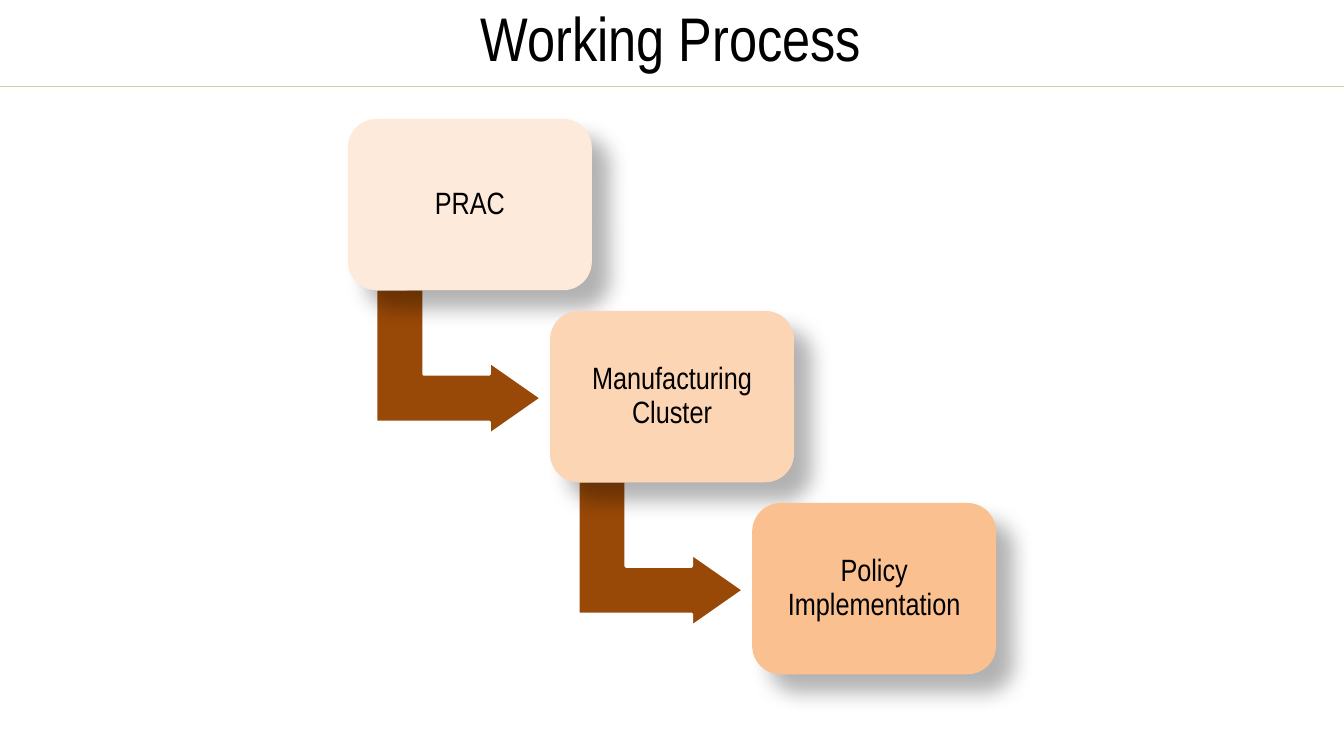
from lxml import etree
from pptx import Presentation
from pptx.dml.color import RGBColor
from pptx.enum.shapes import MSO_SHAPE as Shape
from pptx.enum.text import MSO_ANCHOR as Anchor, PP_ALIGN as Align
from pptx.oxml import parse_xml
from pptx.oxml.ns import nsdecls
from pptx.util import Inches, Pt

COLORS = {
    "text": "000000",
    "title_line": "C3D69B",
    "arrow": "984807",
    "arrow_line": "FFFFFF",
    "shadow": "000000",
    "prac": "FDEADA",
    "cluster": "FCD5B5",
    "policy": "FAC090",
}
FONT = "Arial Narrow"
STEPS = [
    ("PRAC", "prac"),
    ("Manufacturing Cluster", "cluster"),
    ("Policy Implementation", "policy"),
]
STEP_W, STEP_H = 2.42, 1.7
ARROW_W, ARROW_H = 1.44, 1.64


def color(name):
    return RGBColor.from_string(COLORS[name])


def style_text(frame, text, size):
    frame.text = text
    frame.word_wrap = True
    frame.vertical_anchor = Anchor.MIDDLE
    paragraph = frame.paragraphs[0]
    paragraph.alignment = Align.CENTER
    paragraph.font.name = FONT
    paragraph.font.size = Pt(size)
    paragraph.font.color.rgb = color("text")
    return paragraph


def add_shadow(shape):
    """Soft shadow falling to the lower right."""
    shape.shadow.inherit = False
    effects = shape.element.spPr.find("{*}effectLst")
    shadow = parse_xml(
        f'<a:outerShdw {nsdecls("a")} blurRad="{Pt(15)}" dist="{Pt(18)}" '
        'dir="2700000" algn="tl" rotWithShape="0"/>')
    tint = etree.SubElement(shadow, shadow.tag.replace("outerShdw", "srgbClr"),
                            val=COLORS["shadow"])
    etree.SubElement(tint, shadow.tag.replace("outerShdw", "alpha"), val="30000")
    effects.append(shadow)


def draw_title(slide, left, top, width, height):
    title = slide.shapes.title
    title.left, title.top = Inches(left), Inches(top)
    title.width, title.height = Inches(width), Inches(height)
    title.line.color.rgb = color("title_line")
    title.line.width = Pt(0.75)
    style_text(title.text_frame, "Working Process", 44)


def draw_arrow(slide, left, top):
    """Bent arrow, turned to lead down and then right."""
    arrow = slide.shapes.add_shape(Shape.BENT_UP_ARROW, Inches(left), Inches(top),
                                   Inches(ARROW_W), Inches(ARROW_H))
    arrow.rotation = 90
    for index, value in enumerate((0.328, 0.25, 0.358)):
        arrow.adjustments[index] = value
    arrow.shadow.inherit = False
    arrow.fill.solid()
    arrow.fill.fore_color.rgb = color("arrow")
    arrow.line.color.rgb = color("arrow_line")
    arrow.line.width = Pt(2)


def draw_step(slide, left, top, label, fill):
    step = slide.shapes.add_shape(Shape.ROUNDED_RECTANGLE, Inches(left), Inches(top),
                                  Inches(STEP_W), Inches(STEP_H))
    step.adjustments[0] = 0.167
    step.fill.solid()
    step.fill.fore_color.rgb = color(fill)
    step.line.fill.background()
    add_shadow(step)
    frame = step.text_frame
    frame.margin_left = frame.margin_right = Inches(0.09)
    frame.margin_top = frame.margin_bottom = Inches(0.09)
    style_text(frame, label, 22).line_spacing = 0.9


def draw_process(slide, left, top, width, height):
    """Staircase of steps from the top left to the bottom right of the box."""
    gaps = len(STEPS) - 1
    step_right = (width - STEP_W) / gaps
    step_down = (height - STEP_H) / gaps
    for index, (label, fill) in enumerate(STEPS):
        x, y = left + index * step_right, top + index * step_down
        if index < gaps:
            draw_arrow(slide, x + 0.38, y + 1.59)
        draw_step(slide, x, y, label, fill)


def main():
    deck = Presentation()
    deck.slide_width, deck.slide_height = Inches(13.33), Inches(7.5)
    slide = deck.slides.add_slide(deck.slide_layouts[5])
    draw_title(slide, -0.1, -0.13, 13.51, 0.99)
    draw_process(slide, 3.45, 1.18, 6.43, 5.51)
    deck.save("out.pptx")


if __name__ == "__main__":
    main()
